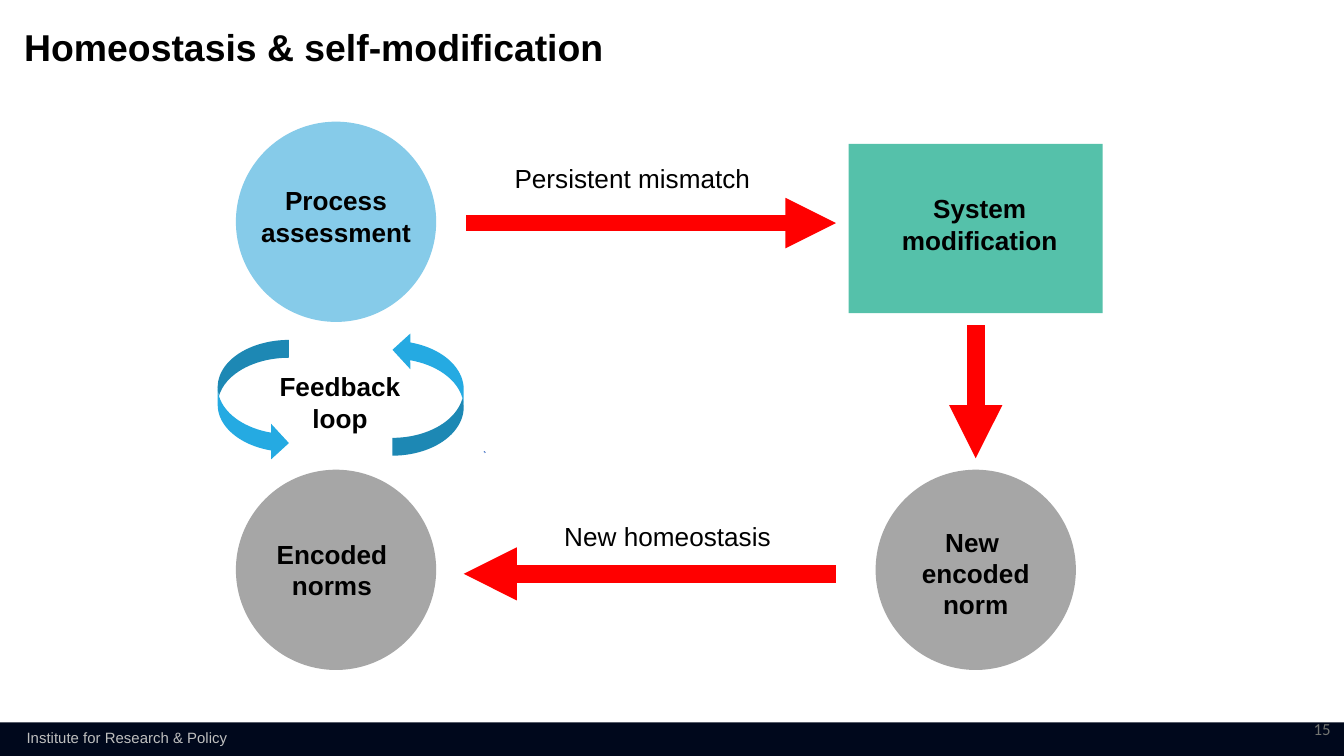
from dataclasses import dataclass

from lxml import etree
from pptx import Presentation
from pptx.dml.color import RGBColor
from pptx.enum.shapes import MSO_CONNECTOR, MSO_SHAPE
from pptx.enum.text import MSO_ANCHOR, PP_ALIGN
from pptx.oxml.ns import qn
from pptx.util import Inches, Pt

LEFT, CENTER, RIGHT = PP_ALIGN.LEFT, PP_ALIGN.CENTER, PP_ALIGN.RIGHT
TOP, MIDDLE = MSO_ANCHOR.TOP, MSO_ANCHOR.MIDDLE
RECTANGLE, ELLIPSE, ARC = MSO_SHAPE.RECTANGLE, MSO_SHAPE.OVAL, MSO_SHAPE.ARC
LOOP_ARROW = MSO_SHAPE.CURVED_RIGHT_ARROW
STRAIGHT = MSO_CONNECTOR.STRAIGHT


@dataclass(frozen=True)
class Theme:
    font: str = "Arial"
    number_font: str = "Calibri"
    ink: str = "000000"
    sky: str = "86CBE9"
    green: str = "55C1AA"
    grey: str = "A6A6A6"
    blue: str = "25AAE2"
    red: str = "FF0000"
    band: str = "00081C"
    footer: str = "BFBFBF"
    number: str = "737572"
    dot: str = "4472C4"
    title_size: float = 20
    body_size: float = 14
    number_size: float = 9
    footer_size: float = 8


THEME = Theme()
WIDTH = 10
HEIGHT = WIDTH * 9 / 16

# Grid: two columns and two rows; the box sits slightly below the first row
COLUMNS = (2.5, 7.26)
CIRCLE_ROWS = (1.65, 4.24)
BOX_ROW = 1.7
CIRCLE = (1.49, 1.49)
BOX = (1.89, 1.26)

# Content
TITLE = "Homeostasis & self-modification"
FOOTER = "Institute for Research & Policy"
PAGE_NUMBER = "15"
# centre, outline, size, fill, label, label size, label offset from centre
NODES = [
    ((COLUMNS[0], CIRCLE_ROWS[0]), ELLIPSE, CIRCLE, THEME.sky,
     "Process assessment", (1.45, 0.57), (0, -0.04)),
    ((COLUMNS[1], BOX_ROW), RECTANGLE, BOX, THEME.green,
     "System modification", (1.52, 0.57), (0.03, -0.03)),
    ((COLUMNS[1], CIRCLE_ROWS[1]), ELLIPSE, CIRCLE, THEME.grey,
     "New \nencoded norm", (1.45, 0.81), (0, 0.03)),
    ((COLUMNS[0], CIRCLE_ROWS[1]), ELLIPSE, CIRCLE, THEME.grey,
     "Encoded norms", (1.36, 0.57), (-0.03, 0)),
]
# start, end, line width
ARROWS = [
    ((3.47, 1.66), (6.22, 1.66), 9),
    ((COLUMNS[1], 2.42), (COLUMNS[1], 3.41), 9.5),
    ((6.22, 4.27), (3.45, 4.27), 9.5),
]
ARROW_LABELS = [
    ("Persistent mismatch", (3.73, 1.16, 2.22, 0.34)),
    ("New homeostasis", (4.1, 3.82, 1.93, 0.34)),
]
LOOP_LABEL = ("Feedback loop", (1.9, 2.71, 1.26, 0.57))
# area, rotation
LOOP_ARROWS = [((2.92, 2.47, 0.53, 0.92), 180), ((1.62, 2.53, 0.53, 0.9), 0)]


def color(code):
    return RGBColor.from_string(code)


def inches(area):
    return [Inches(value) for value in area]


def centered(center, size):
    return (center[0] - size[0] / 2, center[1] - size[1] / 2, *size)


def add_filled(slide, outline, area, fill, rotation=0):
    shape = slide.shapes.add_shape(outline, *inches(area))
    shape.shadow.inherit = False
    shape.fill.solid()
    shape.fill.fore_color.rgb = color(fill)
    shape.line.fill.background()
    shape.rotation = rotation


def add_text(slide, text, area, size=THEME.body_size, bold=False, align=LEFT,
             ink=THEME.ink, font=THEME.font, anchor=TOP, inset=(0.1, 0.05), spacing=None):
    text_frame = slide.shapes.add_textbox(*inches(area)).text_frame
    text_frame.word_wrap = True
    text_frame.vertical_anchor = anchor
    text_frame.margin_left = text_frame.margin_right = Inches(inset[0])
    text_frame.margin_top = text_frame.margin_bottom = Inches(inset[1])
    text_frame.text = text
    for paragraph in text_frame.paragraphs:
        paragraph.alignment = align
        paragraph.line_spacing = spacing
        for run in paragraph.runs:
            run.font.name, run.font.size, run.font.bold = font, Pt(size), bold
            run.font.color.rgb = color(ink)


def add_arrow(slide, start, end, width):
    connector = slide.shapes.add_connector(STRAIGHT, *inches(start + end))
    connector.line.color.rgb = color(THEME.red)
    connector.line.width = Pt(width)
    line = connector.line._get_or_add_ln()
    etree.SubElement(line, qn("a:tailEnd"), type="triangle")
    etree.SubElement(connector._element.spPr, qn("a:effectLst"))


def main():
    presentation = Presentation()
    presentation.slide_width, presentation.slide_height = inches((WIDTH, HEIGHT))
    slide = presentation.slides.add_slide(presentation.slide_layouts[6])

    # Footer band and page number
    add_filled(slide, RECTANGLE, (0, HEIGHT - 0.25, WIDTH, 0.25), THEME.band)
    add_text(slide, FOOTER, (0.1, 5.37, 1.8, 0.24), THEME.footer_size, ink=THEME.footer)
    add_text(slide, PAGE_NUMBER, (WIDTH - 0.83, 5.27, 0.83, 0.3), THEME.number_size,
             align=RIGHT, ink=THEME.number, font=THEME.number_font, anchor=MIDDLE)

    # Title
    add_text(slide, TITLE, (0.18, 0.22, 4.83, 0.3), THEME.title_size, bold=True,
             inset=(0, 0), spacing=0.9)

    # Small arc beside the loop
    arc = slide.shapes.add_shape(ARC, *inches((3.59, 3.36, 0.02, 0.02)))
    arc.shadow.inherit = False
    arc.fill.background()
    arc.line.color.rgb = color(THEME.dot)
    arc.line.width = Pt(0.5)

    # Nodes with their labels
    for center, outline, size, fill, label, label_size, offset in NODES:
        add_filled(slide, outline, centered(center, size), fill)
        label_center = (center[0] + offset[0], center[1] + offset[1])
        add_text(slide, label, centered(label_center, label_size), bold=True, align=CENTER)

    # Flow between the nodes
    for start, end, width in ARROWS:
        add_arrow(slide, start, end, width)
    for label, area in ARROW_LABELS:
        add_text(slide, label, area)

    # Feedback loop
    add_text(slide, *LOOP_LABEL, bold=True, align=CENTER)
    for area, rotation in LOOP_ARROWS:
        add_filled(slide, LOOP_ARROW, area, THEME.blue, rotation)

    presentation.save("out.pptx")


if __name__ == "__main__":
    main()
